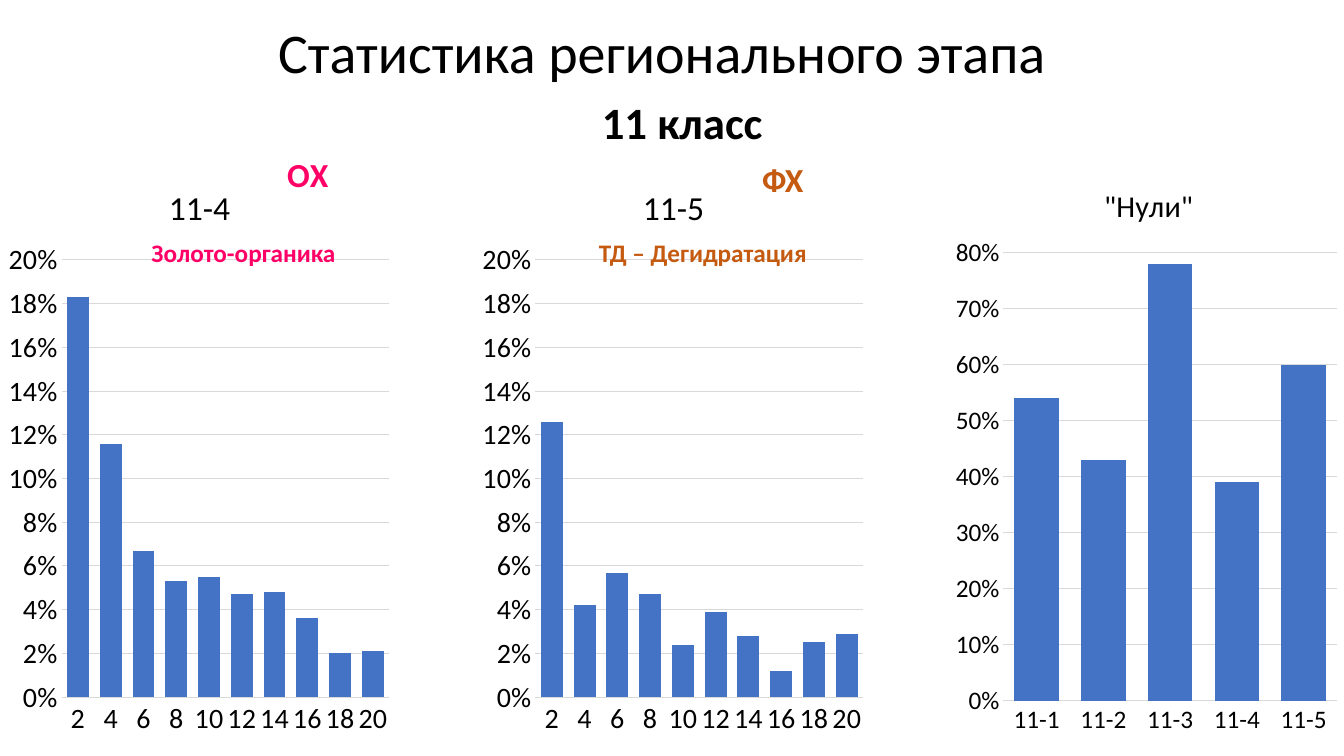
"""Build the slide with 11th grade statistics of the regional stage."""
from lxml import etree
from pptx import Presentation
from pptx import util as u
from pptx.chart import data as chart_data
from pptx.dml.color import RGBColor
from pptx.enum import chart as ch
from pptx.enum import text as t
from pptx.oxml import ns

BLACK = RGBColor(0, 0, 0)
BLUE = RGBColor(0x44, 0x72, 0xC4)
GRID = RGBColor(0xD9, 0xD9, 0xD9)
PINK = RGBColor(0xFF, 0x00, 0x66)
ORANGE = RGBColor(0xC5, 0x5A, 0x11)

FONT = "Calibri"
PANEL_TOP, PANEL_PITCH = 1.51, 4.7
PANEL_WIDTH, PANEL_HEIGHT = 3.94, 5.91
POINTS = [str(points) for points in range(2, 21, 2)]

PANELS = [
    {"heading": "11-4", "cats": POINTS, "size": 20, "top": 0.2, "step": 0.02,
     "vals": [0.183, 0.116, 0.067, 0.053, 0.055, 0.047, 0.048, 0.036, 0.02, 0.021],
     "heading_at": {"x": 0.41, "y": 0.045},
     "plot_at": {"x": 0.155, "y": 0.181, "w": 0.825, "h": 0.734},
     "labels": [("OХ", (2.75, -0.03, 0.62, 0.5), 24, PINK, {}),
                ("Золото-органика", (0.9, 0.8, 3.03, 0.4), 18, PINK,
                 {"wrap": True, "align": t.PP_ALIGN.CENTER})]},
    {"heading": "11-5", "cats": POINTS, "size": 20, "top": 0.2, "step": 0.02,
     "vals": [0.126, 0.042, 0.057, 0.047, 0.024, 0.039, 0.028, 0.012, 0.025, 0.029],
     "heading_at": {"x": 0.41, "y": 0.045},
     "plot_at": {"x": 0.155, "y": 0.181, "w": 0.825, "h": 0.734},
     "labels": [("ФХ", (2.76, 0.02, 0.62, 0.5), 24, ORANGE, {}),
                ("ТД – Дегидратация", (1.13, 0.8, 2.28, 0.4), 18, ORANGE,
                 {"align": t.PP_ALIGN.CENTER})]},
    {"heading": '"Нули"', "cats": [f"11-{task}" for task in range(1, 6)],
     "size": 18, "top": 0.8, "step": 0.1,
     "vals": [0.54, 0.43, 0.78, 0.39, 0.6],
     "heading_at": {"x": 0.38, "y": 0.045},
     "plot_at": {"x": 0.14, "y": 0.169, "w": 0.84, "h": 0.752},
     "labels": []},
]


def apply(target, **values):
    """Set every given attribute on the target."""
    for name, value in values.items():
        setattr(target, name, value)


def style_font(font, size, color=BLACK, bold=False):
    """Give a font its face, size, weight and colour."""
    apply(font, name=FONT, size=u.Pt(size), bold=bold)
    font.color.rgb = color


def add_label(slide, wording, box, size, color=BLACK, bold=True,
              wrap=False, align=t.PP_ALIGN.LEFT):
    """Place one line of text in the given box."""
    frame = slide.shapes.add_textbox(*map(u.Inches, box)).text_frame
    apply(frame, word_wrap=wrap, auto_size=t.MSO_AUTO_SIZE.SHAPE_TO_FIT_TEXT)
    line = frame.paragraphs[0]
    line.alignment = align
    run = line.add_run()
    run.text = wording
    style_font(run.font, size, color, bold)


def set_layout(parent, index, fractions, inner=False):
    """Fix a chart part at fractions of the chart area."""
    for old in parent.findall(ns.qn("c:layout")):
        parent.remove(old)
    layout = etree.Element(ns.qn("c:layout"))
    manual = etree.SubElement(layout, ns.qn("c:manualLayout"))
    settings = {"layoutTarget": "inner"} if inner else {}
    settings.update(xMode="edge", yMode="edge", **fractions)
    for tag, value in settings.items():
        etree.SubElement(manual, ns.qn(f"c:{tag}")).set("val", str(value))
    parent.insert(index, layout)


def style_axes(chart, panel):
    """Format the category and percentage axes with the gridlines."""
    for axis in (chart.category_axis, chart.value_axis):
        apply(axis, major_tick_mark=ch.XL_TICK_MARK.NONE,
              minor_tick_mark=ch.XL_TICK_MARK.NONE)
        style_font(axis.tick_labels.font, panel["size"])
    percent = chart.value_axis
    apply(percent, minimum_scale=0, maximum_scale=panel["top"],
          major_unit=panel["step"], has_major_gridlines=True)
    apply(percent.tick_labels, number_format="0%", number_format_is_linked=False)
    percent.format.line.fill.background()
    for line in (chart.category_axis.format.line,
                 percent.major_gridlines.format.line):
        line.color.rgb = GRID
        line.width = u.Pt(0.75)


def add_panel(slide, left, top, panel):
    """Draw one column chart with its heading and topic labels."""
    results = chart_data.CategoryChartData(number_format="0%")
    results.categories = panel["cats"]
    results.add_series("Series 1", panel["vals"])
    box = map(u.Inches, (left, top, PANEL_WIDTH, PANEL_HEIGHT))
    chart = slide.shapes.add_chart(
        ch.XL_CHART_TYPE.COLUMN_CLUSTERED, *box, results).chart
    apply(chart, has_legend=False, has_title=True)
    style_font(chart.font, panel["size"])

    heading = chart.chart_title.text_frame.paragraphs[0].add_run()
    heading.text = panel["heading"]
    style_font(heading.font, panel["size"] * 1.2)
    set_layout(chart.chart_title._element, 1, panel["heading_at"])

    columns = chart.plots[0]
    apply(columns, gap_width=50, vary_by_categories=False)
    fill = columns.series[0].format.fill
    fill.solid()
    fill.fore_color.rgb = BLUE
    style_axes(chart, panel)
    plot_area = chart._chartSpace.find(".//" + ns.qn("c:plotArea"))
    set_layout(plot_area, 0, panel["plot_at"], inner=True)

    for wording, (dx, dy, width, height), size, color, options in panel["labels"]:
        add_label(slide, wording, (left + dx, top + dy, width, height),
                  size, color, **options)


def add_header(slide, left, top):
    """Place the slide title and the grade below it."""
    add_label(slide, "Статистика регионального этапа",
              (left, top, 8.02, 0.77), 40, bold=False)
    add_label(slide, "11 класс", (left + 3.21, top + 0.77, 1.81, 0.64), 32)


def main():
    """Build and save the presentation."""
    deck = Presentation()
    apply(deck, slide_width=u.Inches(13.33), slide_height=u.Inches(7.5))
    slide = deck.slides.add_slide(deck.slide_layouts[6])
    for column, panel in enumerate(PANELS):
        add_panel(slide, column * PANEL_PITCH, PANEL_TOP, panel)
    add_header(slide, 2.66, 0.12)
    deck.save("out.pptx")


if __name__ == "__main__":
    main()
